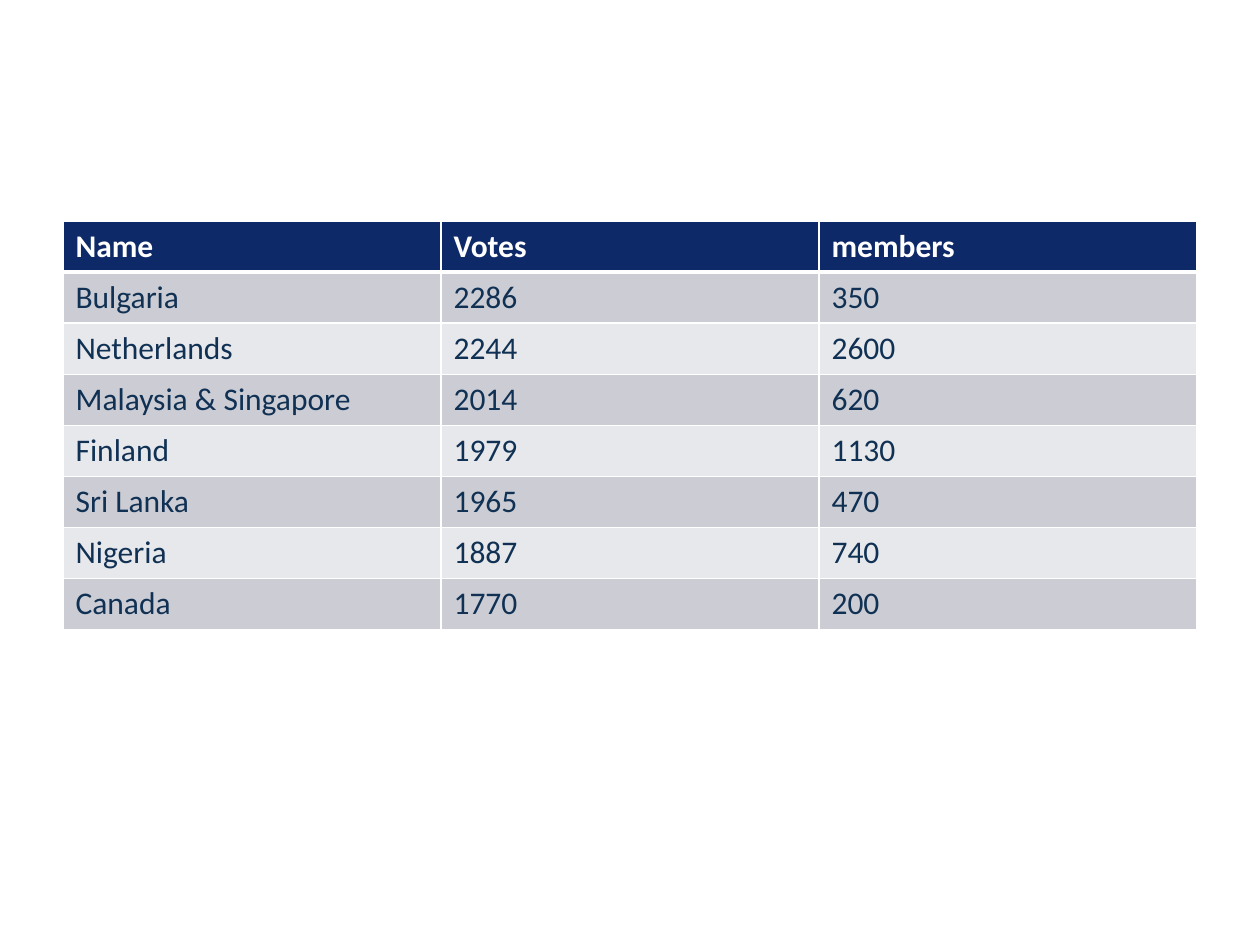
from dataclasses import dataclass

from lxml.etree import SubElement
from pptx import Presentation
from pptx.dml.color import RGBColor
from pptx.oxml.ns import qn
from pptx.util import Emu, Pt

# Content
HEADINGS = ("Name", "Votes", "members")
COUNTRIES = [
    ("Bulgaria", "2286", "350"),
    ("Netherlands", "2244", "2600"),
    ("Malaysia & Singapore", "2014", "620"),
    ("Finland", "1979", "1130"),
    ("Sri Lanka", "1965", "470"),
    ("Nigeria", "1887", "740"),
    ("Canada", "1770", "200"),
]


@dataclass(frozen=True)
class Theme:
    font: str = "Calibri"
    size: int = 18
    header_fill: str = "0D2968"
    header_text: str = "FFFFFF"
    body_text: str = "103154"
    bands: tuple = ("CCCDD4", "E7E8EB")
    rule: str = "FFFFFF"
    thin: int = 1
    thick: int = 3


THEME = Theme()

# Layout in px
PX_PER_INCH = 126
SLIDE_W, SLIDE_H = 1260, 945
LEFT, TOP = 63, 221
COLUMN_W, ROW_H = 378, 51


def px(length):
    return Emu(round(length * 914400 / PX_PER_INCH))


def add_borders(cell, top, bottom):
    """Draw the four cell rules; call before the fill, which must follow them."""
    properties = cell._tc.get_or_add_tcPr()
    widths = {"lnL": THEME.thin, "lnR": THEME.thin, "lnT": top, "lnB": bottom}
    for side, width in widths.items():
        line = SubElement(properties, qn(f"a:{side}"), w=str(Pt(width)))
        fill = SubElement(line, qn("a:solidFill"))
        SubElement(fill, qn("a:srgbClr"), val=THEME.rule)


def fill_cell(cell, text, row):
    is_header = row == 0
    add_borders(
        cell,
        top=THEME.thick if row == 1 else THEME.thin,
        bottom=THEME.thick if is_header else THEME.thin,
    )
    band = THEME.header_fill if is_header else THEME.bands[(row - 1) % 2]
    cell.fill.solid()
    cell.fill.fore_color.rgb = RGBColor.from_string(band)

    run = cell.text_frame.paragraphs[0].add_run()
    run.text = text
    run.font.name = THEME.font
    run.font.size = Pt(THEME.size)
    run.font.bold = is_header
    color = THEME.header_text if is_header else THEME.body_text
    run.font.color.rgb = RGBColor.from_string(color)


def main():
    deck = Presentation()
    deck.slide_width, deck.slide_height = px(SLIDE_W), px(SLIDE_H)
    slide = deck.slides.add_slide(deck.slide_layouts[6])

    # Votes table
    rows = [HEADINGS, *COUNTRIES]
    votes = slide.shapes.add_table(
        len(rows), len(HEADINGS), px(LEFT), px(TOP),
        px(COLUMN_W * len(HEADINGS)), px(ROW_H * len(rows)),
    ).table
    for column in votes.columns:
        column.width = px(COLUMN_W)
    for row, values in enumerate(rows):
        votes.rows[row].height = px(ROW_H)
        for column, text in enumerate(values):
            fill_cell(votes.cell(row, column), text, row)

    deck.save("out.pptx")


if __name__ == "__main__":
    main()
